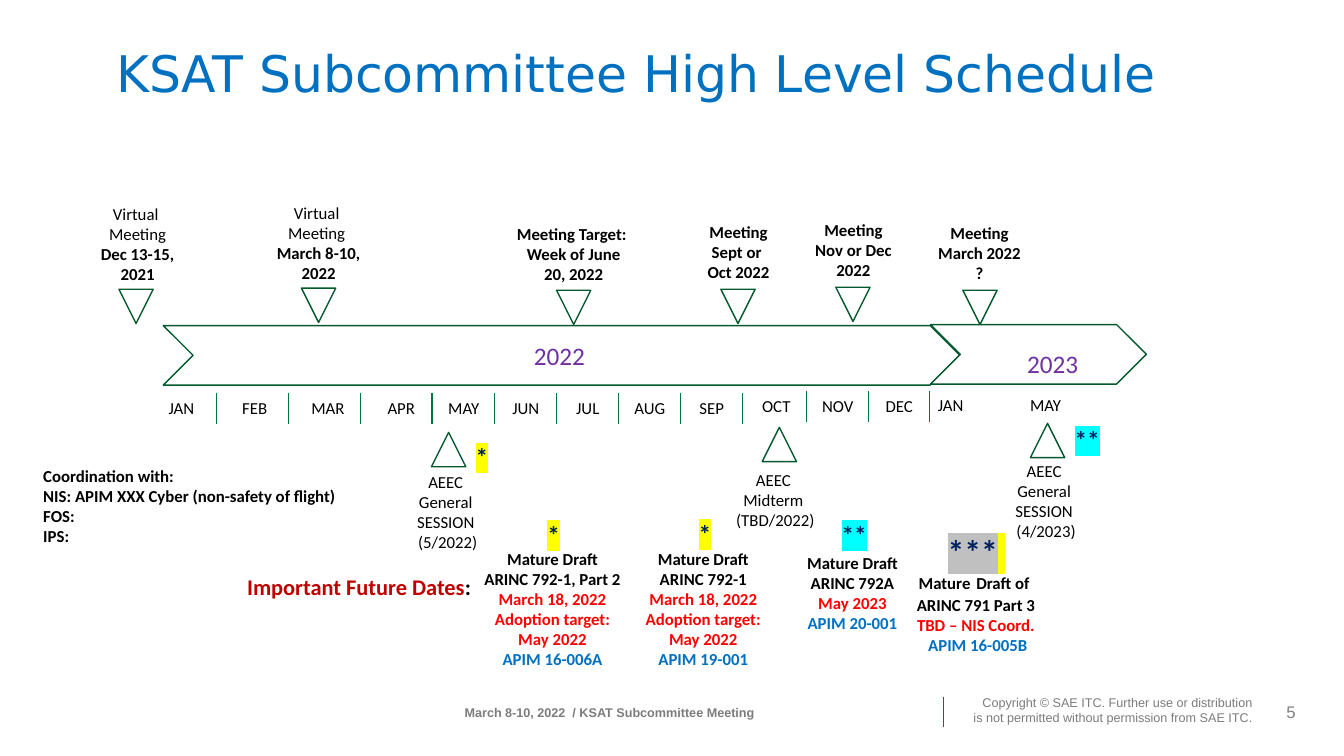
from lxml import etree
from pptx import Presentation
from pptx.dml.color import RGBColor
from pptx.enum.shapes import MSO_CONNECTOR, MSO_SHAPE
from pptx.enum.text import MSO_ANCHOR, PP_ALIGN
from pptx.oxml.ns import qn
from pptx.util import Inches, Pt

LEFT, CENTER, RIGHT = PP_ALIGN.LEFT, PP_ALIGN.CENTER, PP_ALIGN.RIGHT
MIDDLE = MSO_ANCHOR.MIDDLE
CHEVRON, TRIANGLE = MSO_SHAPE.CHEVRON, MSO_SHAPE.ISOSCELES_TRIANGLE
STRAIGHT = MSO_CONNECTOR.STRAIGHT

# Text styles are (font, size, colour, bold)
THEME = {
    "title": ("DejaVu Sans", 36, "0070C0", False),
    "plain": ("Calibri", 12, "000000", False),
    "bold": ("Calibri", 12, "000000", True),
    "date": ("Calibri", 12, "FF0000", True),
    "apim": ("Calibri", 12, "0070C0", True),
    "gap": ("Calibri", 18, "FF0000", True),
    "heading": ("Calibri", 16, "C00000", True),
    "colon": ("Calibri", 16, "000000", True),
    "year": ("Calibri", 18, "7030A0", False),
    "star": ("Calibri", 18, "002060", True),
    "big star": ("Calibri", 24, "002060", True),
    "footer": ("Arial", 9, "7C7C7C", False),
    "meeting": ("Arial", 9, "7C7C7C", True),
    "number": ("Arial", 12, "808080", False),
    "outline": RGBColor.from_string("00582C"),
    "tick": RGBColor.from_string("00773C"),
    "white": RGBColor.from_string("FFFFFF"),
    "yellow": "FFFF00", "cyan": "00FFFF", "grey": "C0C0C0",
}

# The grid has ten cells to the inch: 133.3 columns by 75 rows
CELL = Inches(0.1)
prs = Presentation()
prs.slide_width, prs.slide_height = int(133.3 * CELL), 75 * CELL
s = prs.slides.add_slide(prs.slide_layouts[6])


def write(at, lines, align=CENTER, sp=None, inset=(1, 0.5, 1, 0.5), anchor=None):
    """Each line is a list of (style, text) or (style, text, highlight) runs."""
    if sp is None:
        sp = s.shapes.add_textbox(*(int(v * CELL) for v in at))
    tf = sp.text_frame
    tf.word_wrap = True
    tf.margin_left, tf.margin_top, tf.margin_right, tf.margin_bottom = (
        int(v * CELL) for v in inset)
    if anchor is not None:
        tf.vertical_anchor = anchor
    for i, runs in enumerate(lines):
        p = tf.add_paragraph() if i else tf.paragraphs[0]
        p.alignment = align
        agree = len({run[0] for run in runs}) == 1
        for style, text, *highlight in runs:
            if len(runs) == 1 and not highlight:
                p.text = text
            else:
                r = p.add_run()
                r.text = text
            font = p.font if agree else r.font
            name, size, colour, bold = THEME[style]
            font.name, font.size, font.bold = name, Pt(size), bold
            font.color.rgb = RGBColor.from_string(colour)
            for mark in highlight:
                hl = etree.SubElement(r._r.get_or_add_rPr(), qn("a:highlight"))
                etree.SubElement(hl, qn("a:srgbClr")).set("val", THEME[mark])
    return tf


def outline(kind, x, y, w, h):
    sp = s.shapes.add_shape(kind, *(int(v * CELL) for v in (x, y, w, h)))
    sp.shadow.inherit = False
    sp.line.color.rgb, sp.line.width = THEME["outline"], Pt(1)
    if kind == CHEVRON:
        sp.fill.solid()
        sp.fill.fore_color.rgb = THEME["white"]
    else:
        sp.fill.background()
    return sp


# Title
tf = write((7.9, 2.3, 110.4, 10.6),
           [[("title", "KSAT Subcommittee High Level Schedule")]], anchor=MIDDLE)
tf.paragraphs[0].line_spacing = 0.9

# Footer
none = (0, 0, 0, 0)
write((40.2, 69.9, 40.5, 1.5),
      [[("meeting", "March 8-10, 2022  / KSAT Subcommittee Meeting")]], inset=none)
write((94.9, 68.9, 29.3, 3),
      [[("footer", "Copyright © SAE ITC. Further use or distribution\n"
                   "is not permitted without permission from SAE ITC.")]],
      RIGHT, inset=none)
write((126.4, 69.6, 2.1, 2), [[("number", "5")]], RIGHT, inset=none)

# Year band
for year, x, y, w, inset in [("2022", 16.2, 32.3, 79, (1, 0.5, 1.4, 0.5)),
                             ("2023", 92.3, 32.2, 21.4, (3.8, 2.3, 1, 0.5))]:
    write(None, [[("year", year)]], sp=outline(CHEVRON, x, y, w, 5.9),
          inset=inset, anchor=MIDDLE)

# Months: names, row, centres of first and last, ticks from first to last
ticks = [(93.6, 69.1, 3)]
for names, y, first, last, tick, end, count in [
        ("JAN FEB MAR APR", 39, 18, 39.8, 21.5, 42.8, 4),
        ("MAY JUN JUL AUG SEP", 39, 46, 70.6, 42.9, 73.6, 6),
        ("OCT NOV DEC", 38.8, 77, 89.2, 80, 92.2, 3),
        ("JAN MAY", 38.65, 94.3, 103.7, 0, 0, 0)]:
    months = names.split()
    for i, month in enumerate(months):
        mid = first + i * (last - first) / (len(months) - 1)
        write((mid - 4, y, 8, 3), [[("plain", month)]])
    ticks += [(tick + i * (end - tick) / (count - 1), y, 3.1) for i in range(count)]

# Month ticks and footer rule
for x, y, h in ticks:
    line = s.shapes.add_connector(
        STRAIGHT, *(int(v * CELL) for v in (x, y, x, y + h)))
    line.line.color.rgb, line.line.width = THEME["tick"], Pt(0.5)
    etree.SubElement(line._element.spPr, qn("a:effectLst"))

# Markers: those above the band point down
for x, y in [(11.8, 28.7), (29.9, 28.6), (55.2, 28.8), (71.5, 28.7), (82.9, 28.5),
             (95.5, 28.8), (42.8, 42.9), (75.6, 42.4), (102.2, 42)]:
    sp = outline(TRIANGLE, x, y, 3.4, 3.4)
    if y < 32:
        sp._element.spPr.find(qn("a:xfrm")).set("flipV", "1")

# Meetings, sessions and drafts: box, then one (style, text) per line
draft = ("bold", "Mature Draft")
target = [("date", "March 18, 2022"), ("date", "Adoption target:\nMay 2022")]
for at, lines in [
        ((7.6, 19.7, 12.1, 9.1), [("plain", "Virtual "), ("plain", "Meeting"),
                                  ("bold", "Dec 13-15, 2021")]),
        ((24.3, 19.6, 14.6, 9.1), [("plain", "Virtual "), ("plain", "Meeting "),
                                   ("bold", "March 8-10,"), ("bold", "2022")]),
        ((50.2, 21.7, 13.4, 7.1), [("bold", "Meeting Target: "),
                                   ("bold", "Week of June 20, 2022")]),
        ((67.2, 21.5, 12.1, 7.1), [("bold", "Meeting"), ("bold", "Sept or "),
                                   ("bold", "Oct 2022")]),
        ((78.6, 21.3, 12.1, 7.1), [("bold", "Meeting"), ("bold", "Nov or Dec 2022")]),
        ((91.1, 21.6, 12.1, 7.1), [("bold", "Meeting"), ("bold", "March 2022"),
                                   ("bold", "?")]),
        ((36.8, 46.3, 15.2, 9.1), [("plain", "AEEC "), ("plain", "General "),
                                   ("plain", "SESSION "), ("plain", "(5/2022)")]),
        ((68.9, 46.1, 16, 7.1), [("plain", "AEEC "), ("plain", "Midterm "),
                                 ("plain", "(TBD/2022)")]),
        ((97.9, 45.2, 11.7, 9.1), [("plain", "AEEC "), ("plain", "General "),
                                   ("plain", "SESSION "), ("plain", "(4/2023)")]),
        ((45.5, 53.9, 18.6, 13.1), [draft, ("bold", "ARINC 792-1, Part 2"), *target,
                                    ("apim", "APIM 16-006A")]),
        ((62.5, 53.9, 14.5, 13.1), [draft, ("bold", "ARINC 792-1"), *target,
                                    ("apim", "APIM 19-001")]),
        ((77.8, 54.3, 13.5, 9.1), [draft, ("bold", "ARINC 792A"), ("date", "May 2023"),
                                   ("apim", "APIM 20-001")])]:
    write(at, [[line] for line in lines])
write((85.6, 55.5, 22.4, 10.1),
      [[("bold", "Mature"), ("gap", " "), ("bold", "Draft of ")],
       [("bold", "ARINC 791 Part 3")], [("date", "TBD – NIS Coord.")],
       [("apim", " APIM 16-005B")]])

# Coordination and heading
write((3.3, 45.7, 34.2, 9.1),
      [[("bold", text)] for text in (
          "Coordination with:", "NIS: APIM XXX Cyber (non-safety of flight)",
          "FOS:", "IPS:")], LEFT)
write((18.9, 56.4, 28.8, 3.7),
      [[("heading", "Important Future Dates"), ("colon", ":")]], RIGHT)

# Stars pair each draft with its session
for x, y, stars, mark in [(46.2, 43.3, "*", "yellow"), (53.3, 51, "*", "yellow"),
                          (68.3, 50.9, "*", "yellow"), (82.5, 51, "**", "cyan"),
                          (105.6, 41.6, "**", "cyan")]:
    write((x, y, 0.7 + 2 * len(stars), 4), [[("star", stars, mark)]], LEFT)
write((92.9, 52.2, 7.9, 5),
      [[("big star", "***", "grey"), ("big star", " ", "yellow")]])

prs.save("out.pptx")
